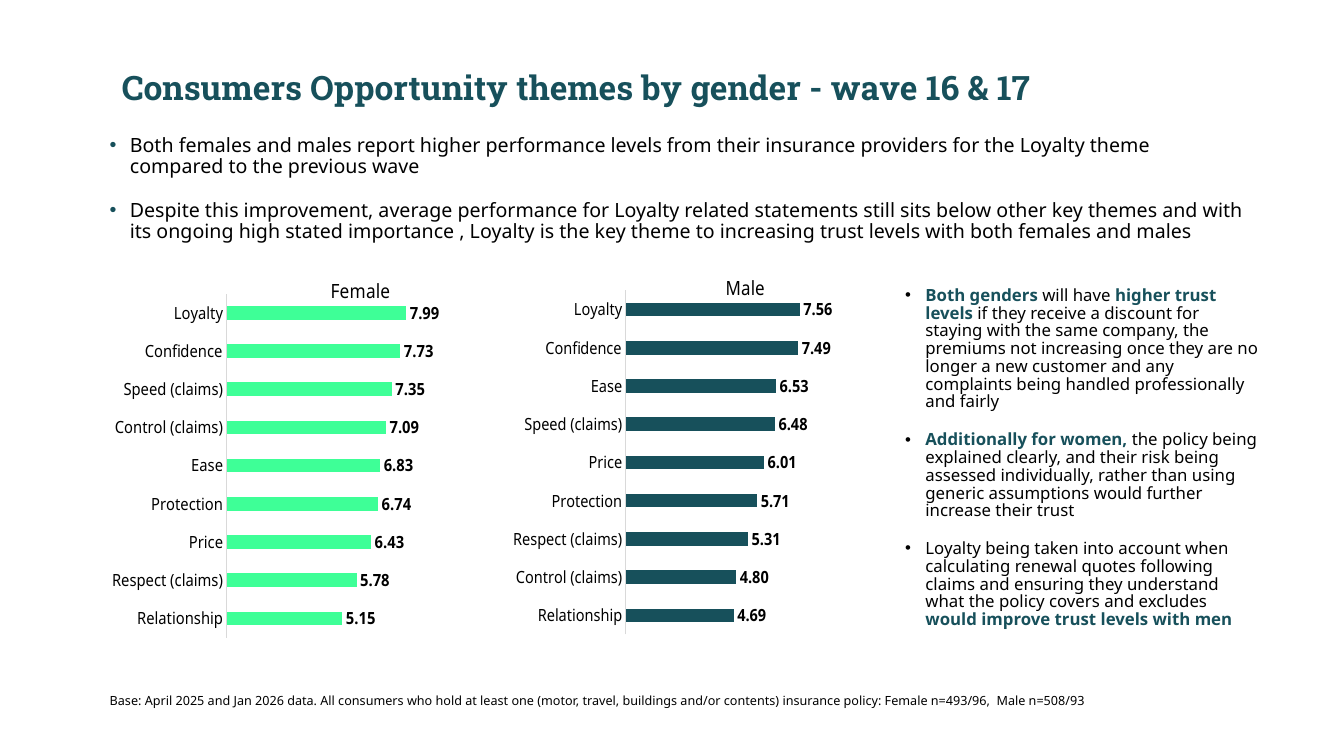
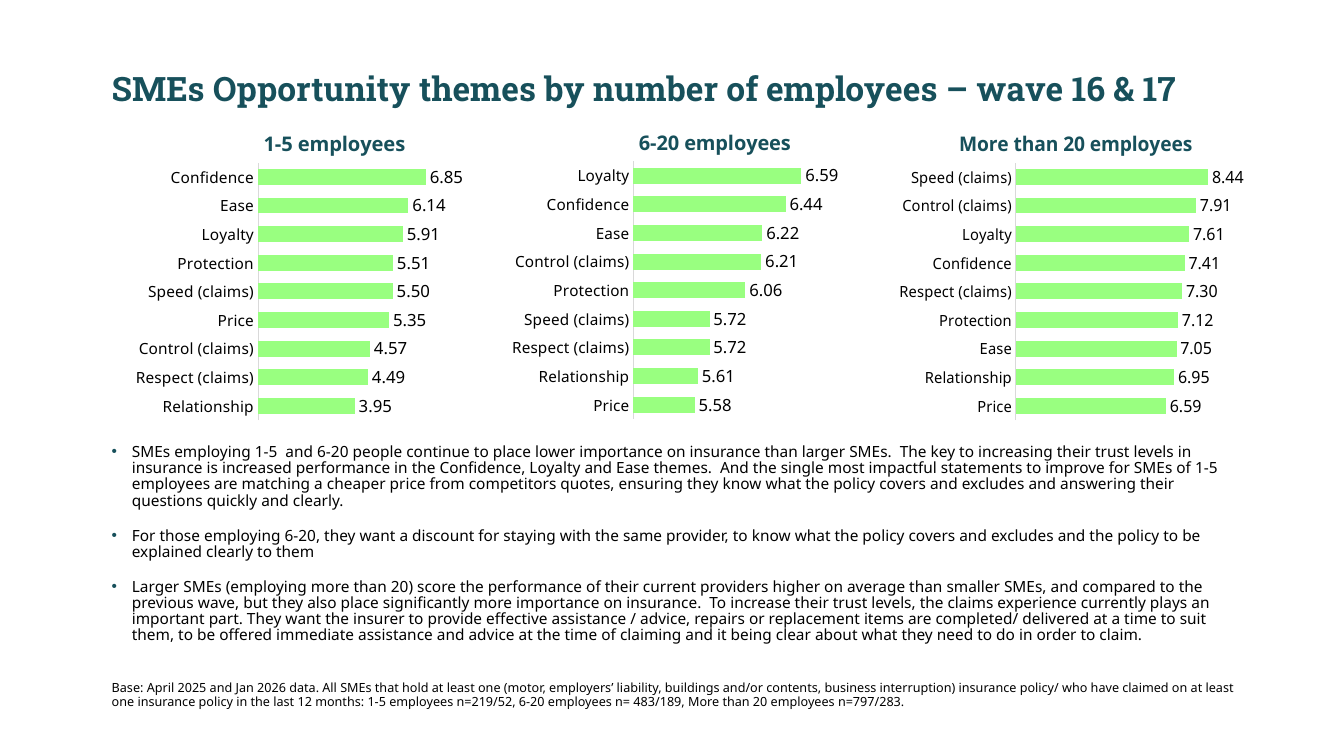
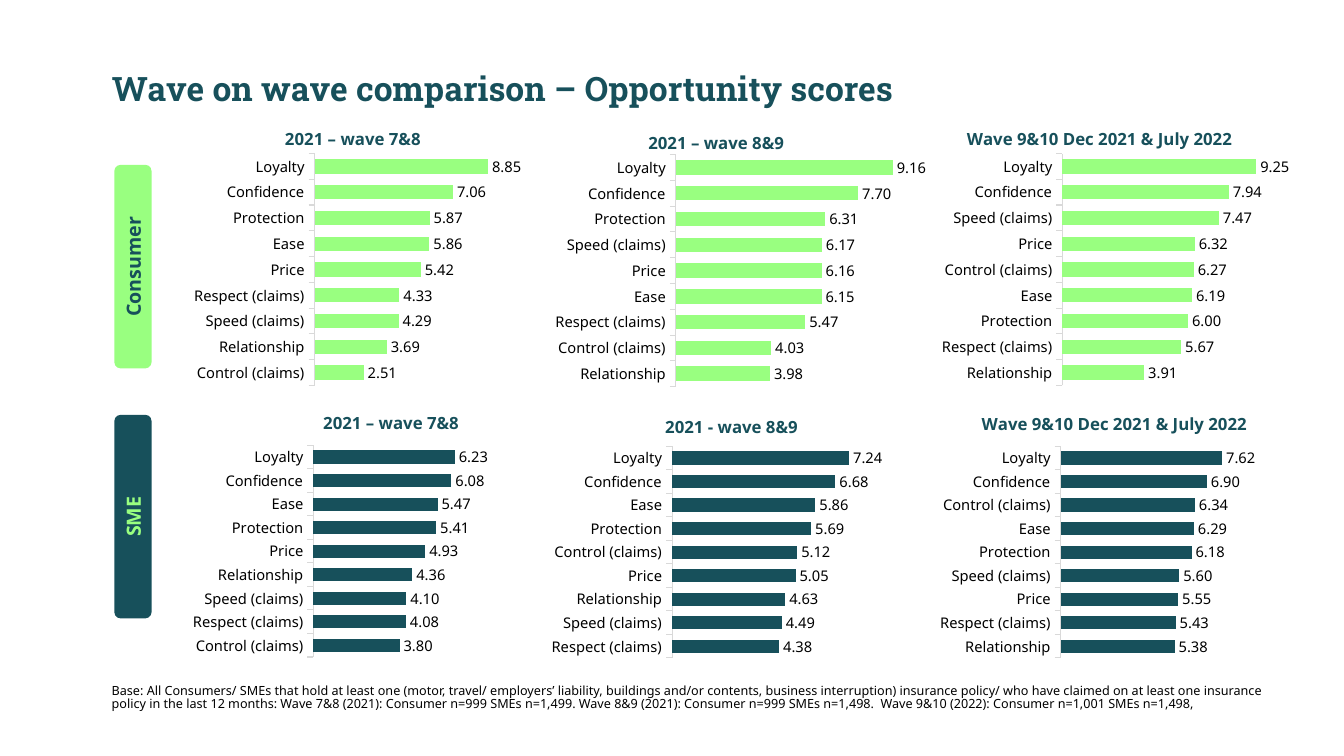
from lxml import etree
from pptx import Presentation
from pptx import util as u
from pptx.chart import data
from pptx.dml import color
from pptx.enum import chart as kinds, shapes, text
from pptx.oxml import ns, parse_xml

Pt = u.Pt
tint = color.RGBColor.from_string
TEAL, LIME, MINT, BLACK, GREY = "17505B", "99FF80", "3EFF97", "000000", "D9D9D9"
BODY, HEAD = "Noto Sans", "Roboto Slab"

deck = Presentation()
deck.slide_width, deck.slide_height = Pt(960), Pt(540)


def put(slide, box, paras, size, face=BODY, dot=None, pad=(7.2, 3.6), lead=0.88):
    frame = slide.shapes.add_textbox(*map(Pt, box)).text_frame
    frame.word_wrap = True
    frame.margin_left = frame.margin_right = Pt(pad[0])
    frame.margin_top = frame.margin_bottom = Pt(pad[1])
    for i, runs in enumerate(paras):
        para = frame.paragraphs[0] if i == 0 else frame.add_paragraph()
        para.line_spacing = lead
        if i:
            para.space_before = Pt(1.2 * size)
        if dot:
            props = para._p.get_or_add_pPr()
            props.set("marL", str(Pt(14.4)))
            props.set("indent", str(-Pt(14.4)))
            hue = etree.SubElement(props, ns.qn("a:buClr"))
            etree.SubElement(hue, ns.qn("a:srgbClr"), val=dot)
            etree.SubElement(props, ns.qn("a:buFont"), typeface="Arial")
            etree.SubElement(props, ns.qn("a:buChar"), char="•")
        for words, bold in runs:
            run = para.add_run()
            run.text = words
            run.font.name, run.font.size, run.font.bold = face, Pt(size), bold
            run.font.color.rgb = tint(TEAL if bold else BLACK)


def draw(slide, box, plot, head, spot, names, vals, fill, size, label, top, gap,
         tick=kinds.XL_TICK_MARK.NONE, strong=False, loud=True, peak=None):
    feed = data.CategoryChartData(number_format="0.00")
    feed.categories = names.split(", ")
    feed.add_series("Series 1", vals)
    chart = slide.shapes.add_chart(
        kinds.XL_CHART_TYPE.BAR_CLUSTERED, *map(Pt, box), feed).chart
    chart.has_legend = False
    chart.font.name, chart.font.size = BODY, Pt(size)
    chart.font.color.rgb = tint(BLACK)

    run = chart.chart_title.text_frame.paragraphs[0].add_run()
    run.text = head
    run.font.name, run.font.size, run.font.bold = BODY, Pt(top), loud
    run.font.color.rgb = tint(TEAL if loud else BLACK)
    chart.chart_title.include_in_layout = False

    cat, val = chart.category_axis, chart.value_axis
    cat.reverse_order = True
    cat.major_tick_mark, cat.minor_tick_mark = tick, kinds.XL_TICK_MARK.NONE
    cat.format.line.color.rgb = tint(GREY)
    cat.format.line.width = Pt(0.75)
    cat.tick_labels.font.name, cat.tick_labels.font.size = BODY, Pt(size)
    cat.tick_labels.font.color.rgb = tint(BLACK)
    val.has_major_gridlines = False
    val.visible = False
    if peak:
        val.maximum_scale = peak

    bars = chart.plots[0]
    bars.gap_width, bars.vary_by_categories = gap, False
    bars.series[0].format.fill.solid()
    bars.series[0].format.fill.fore_color.rgb = tint(fill)
    bars.has_data_labels = True
    marks = bars.data_labels
    marks.show_value = True
    marks.position = kinds.XL_LABEL_POSITION.OUTSIDE_END
    marks.number_format, marks.number_format_is_linked = "0.00", False
    marks.font.name, marks.font.size, marks.font.bold = BODY, Pt(label), strong
    marks.font.color.rgb = tint(BLACK)

    root = chart._chartSpace.chart
    for node, at, place in ((root.find(ns.qn("c:title")), 1, spot), (root.plotArea, 0, plot)):
        for old in node.findall(ns.qn("c:layout")):
            node.remove(old)
        inner = '<c:layoutTarget val="inner"/>' if len(place) == 4 else ""
        modes = '<c:xMode val="edge"/><c:yMode val="edge"/>'
        nums = "".join(f'<c:{k} val="{v}"/>' for k, v in zip("xywh", place))
        node.insert(at, parse_xml(
            f'<c:layout {ns.nsdecls("c")}><c:manualLayout>{inner}{modes}{nums}'
            '</c:manualLayout></c:layout>'))


pages = [
    ("Consumers Opportunity themes by gender - wave 16 & 17", (80, 47.5, 884, 36), (7.2, 3.6),
     "Base: April 2025 and Jan 2026 data. All consumers who hold at least one (motor, travel, buildings and/or contents) insurance policy: Female n=493/96,  Male n=508/93",
     (71.3, 492.5, 803.5, 28)),
    ("SMEs Opportunity themes by number of employees – wave 16 & 17", (72.7, 48, 864, 36), (7.2, 3.6),
     "Base: April 2025 and Jan 2026 data. All SMEs that hold at least one (motor, employers’ liability, buildings and/or contents, business interruption) insurance policy/ who have claimed on at least one insurance policy in the last 12 months: 1-5 employees n=219/52, 6-20 employees n= 483/189, More than 20 employees n=797/283.",
     (72.7, 483.8, 815, 27.4)),
    ("Wave on wave comparison – Opportunity scores", (80, 51.8, 914, 44), (0, 0),
     "Base: All Consumers/ SMEs that hold at least one (motor, travel/ employers’ liability, buildings and/or contents, business interruption) insurance policy/ who have claimed on at least one insurance policy in the last 12 months: Wave 7&8 (2021): Consumer n=999 SMEs n=1,499. Wave 8&9 (2021): Consumer n=999 SMEs n=1,498.  Wave 9&10 (2022): Consumer n=1,001 SMEs n=1,498,",
     (72.7, 485.3, 842.4, 21)),
]
slides = []
for title, box, pad, base, foot in pages:
    slide = deck.slides.add_slide(deck.slide_layouts[6])
    put(slide, box, [[(title, True)]], 24, HEAD, pad=pad, lead=0.9)
    put(slide, foot, [[(base, False)]], 9)
    slides.append(slide)
gender, staff, waves = slides

put(gender, (71.3, 93.6, 825, 92), [
    [("Both females and males report higher performance levels from their insurance providers for the Loyalty theme compared to the previous wave", False)],
    [("Despite this improvement, average performance for Loyalty related statements still sits below other key themes and with its ongoing high stated importance , Loyalty is the key theme to increasing trust levels with both females and males", False)],
], 14, dot=TEAL)
put(gender, (646.6, 205.2, 252.7, 284.4), [
    [("Both genders ", True), ("will have ", False), ("higher trust levels ", True),
     ("if they receive a discount for staying with the same company, the premiums not increasing once they are no longer a new customer and any complaints being handled professionally and fairly", False)],
    [("Additionally for women, ", True),
     ("the policy being explained clearly, and their risk being assessed individually, rather than using generic assumptions would further increase their trust", False)],
    [("Loyalty being taken into account when calculating renewal quotes following claims and ensuring they understand what the policy covers and excludes ", False),
     ("would improve trust levels with men", True)],
], 12, dot=BLACK, pad=(0, 0))

for head, box, wide, spot, fill, names, vals in [
    ("Female", (80, 171.4, 279.4, 284.4), 0.588, (0.49, 0.08), MINT,
     "Loyalty, Confidence, Speed (claims), Control (claims), Ease, Protection, Price, Respect (claims), Relationship",
     (7.99, 7.73, 7.35, 7.09, 6.83, 6.74, 6.43, 5.78, 5.15)),
    ("Male", (366.5, 169.2, 263.5, 284.4), 0.578, (0.5, 0.08), TEAL,
     "Loyalty, Confidence, Ease, Speed (claims), Price, Protection, Respect (claims), Control (claims), Relationship",
     (7.56, 7.49, 6.53, 6.48, 6.01, 5.71, 5.31, 4.8, 4.69)),
]:
    draw(gender, box, (0.197, 0.135, wide, 0.865), head, spot, names, vals, fill,
         12, 12, 14, 182, strong=True, loud=False)

for head, box, wide, left, names, vals in [
    ("1-5 employees", (74.2, 63.4, 259.2, 258.5), 0.54, 0.43,
     "Confidence, Ease, Loyalty, Protection, Speed (claims), Price, Control (claims), Respect (claims), Relationship",
     (6.85, 6.14, 5.91, 5.51, 5.5, 5.35, 4.57, 4.49, 3.95)),
    ("6-20 employees", (345.6, 62.6, 253.4, 258.5), 0.54, 0.43,
     "Loyalty, Confidence, Ease, Control (claims), Protection, Speed (claims), Respect (claims), Relationship, Price",
     (6.59, 6.44, 6.22, 6.21, 6.06, 5.72, 5.72, 5.61, 5.58)),
    ("More than 20 employees", (614.9, 63.4, 273.6, 258.5), 0.562, 0.26,
     "Speed (claims), Control (claims), Loyalty, Confidence, Respect (claims), Protection, Ease, Relationship, Price",
     (8.44, 7.91, 7.61, 7.41, 7.3, 7.12, 7.05, 6.95, 6.59)),
]:
    draw(staff, box, (0.425, 0.204, wide, 0.712), head, (left, 0.1), names, vals, LIME,
         11, 12, 14.4, 80)

put(staff, (72.7, 313.9, 813.6, 167), [
    [("SMEs employing 1-5  and 6-20 people continue to place lower importance on insurance than larger SMEs.  The key to increasing their trust levels in insurance is increased performance in the Confidence, Loyalty and Ease themes.  And the single most impactful statements to improve for SMEs of 1-5 employees are matching a cheaper price from competitors quotes, ensuring they know what the policy covers and excludes and answering their questions quickly and clearly.", False)],
    [("For those employing 6-20, they want a discount for staying with the same provider, to know what the policy covers and excludes and the policy to be explained clearly to them", False)],
    [("Larger SMEs (employing more than 20) score the performance of their current providers higher on average than smaller SMEs, and compared to the previous wave, but they also place significantly more importance on insurance.  To increase their trust levels, the claims experience currently plays an important part. They want the insurer to provide effective assistance / advice, repairs or replacement items are completed/ delivered at a time to suit them, to be offered immediate assistance and advice at the time of claiming and it being clear about what they need to do in order to claim.", False)],
], 11, dot=TEAL)

rows = [
    ("Consumer", LIME, TEAL, 177.1, 209.5, (0.156, 0.791), None, [
        ("2021 – wave 7&8", (106.6, 77, 287.3), (0.411, 0.488), (0.33, 0.05),
         "Loyalty, Confidence, Protection, Ease, Price, Respect (claims), Speed (claims), Relationship, Control (claims)",
         (8.85, 7.06, 5.87, 5.86, 5.42, 4.33, 4.29, 3.69, 2.51)),
        ("2021 – wave 8&9", (356.4, 77.8, 307.4), (0.411, 0.551), (0.34, 0.06),
         "Loyalty, Confidence, Protection, Speed (claims), Price, Ease, Respect (claims), Control (claims), Relationship",
         (9.16, 7.7, 6.31, 6.17, 6.16, 6.15, 5.47, 4.03, 3.98)),
        ("Wave 9&10 Dec 2021 & July 2022", (643.7, 77, 280.1), (0.411, 0.535), (0.16, 0.05),
         "Loyalty, Confidence, Speed (claims), Price, Control (claims), Ease, Protection, Respect (claims), Relationship",
         (9.25, 7.94, 7.47, 6.32, 6.27, 6.19, 6, 5.67, 3.91)),
    ]),
    ("SME", TEAL, LIME, 355.7, 193, (0.163, 0.784), 10, [
        ("2021 – wave 7&8", (133.9, 286.6, 287.3), (0.313, 0.565), (0.33, 0.02),
         "Loyalty, Confidence, Ease, Protection, Price, Relationship, Speed (claims), Respect (claims), Control (claims)",
         (6.23, 6.08, 5.47, 5.41, 4.93, 4.36, 4.1, 4.08, 3.8)),
        ("2021 - wave 8&9", (371.5, 287.3, 307.4), (0.353, 0.569), (0.33, 0.03),
         "Loyalty, Confidence, Ease, Protection, Control (claims), Price, Relationship, Speed (claims), Respect (claims)",
         (7.24, 6.68, 5.86, 5.69, 5.12, 5.05, 4.63, 4.49, 4.38)),
        ("Wave 9&10 Dec 2021 & July 2022", (668.9, 287.3, 251.3), (0.353, 0.603), (0.12, 0.02),
         "Loyalty, Confidence, Control (claims), Ease, Protection, Speed (claims), Price, Respect (claims), Relationship",
         (7.62, 6.9, 6.34, 6.29, 6.18, 5.6, 5.55, 5.43, 5.38)),
    ]),
]
for name, fill, ink, y, high, (low, tall), peak, charts in rows:
    for head, box, (left, wide), spot, names, vals in charts:
        draw(waves, (*box, high), (left, low, wide, tall), head, spot, names, vals, fill,
             10.5, 10.5, 12, 80, tick=kinds.XL_TICK_MARK.OUTSIDE, peak=peak)
    tab = waves.shapes.add_shape(
        shapes.MSO_SHAPE.ROUNDED_RECTANGLE, Pt(22.3), Pt(y), Pt(145.4), Pt(26.6))
    tab.rotation = 270
    tab.shadow.inherit = False
    tab.fill.solid()
    tab.fill.fore_color.rgb = tint(fill)
    tab.line.fill.background()
    frame = tab.text_frame
    frame.vertical_anchor = text.MSO_ANCHOR.MIDDLE
    para = frame.paragraphs[0]
    para.alignment = text.PP_ALIGN.CENTER
    run = para.add_run()
    run.text = name
    run.font.name, run.font.size, run.font.bold = BODY, Pt(14), True
    run.font.color.rgb = tint(ink)

deck.save("out.pptx")
